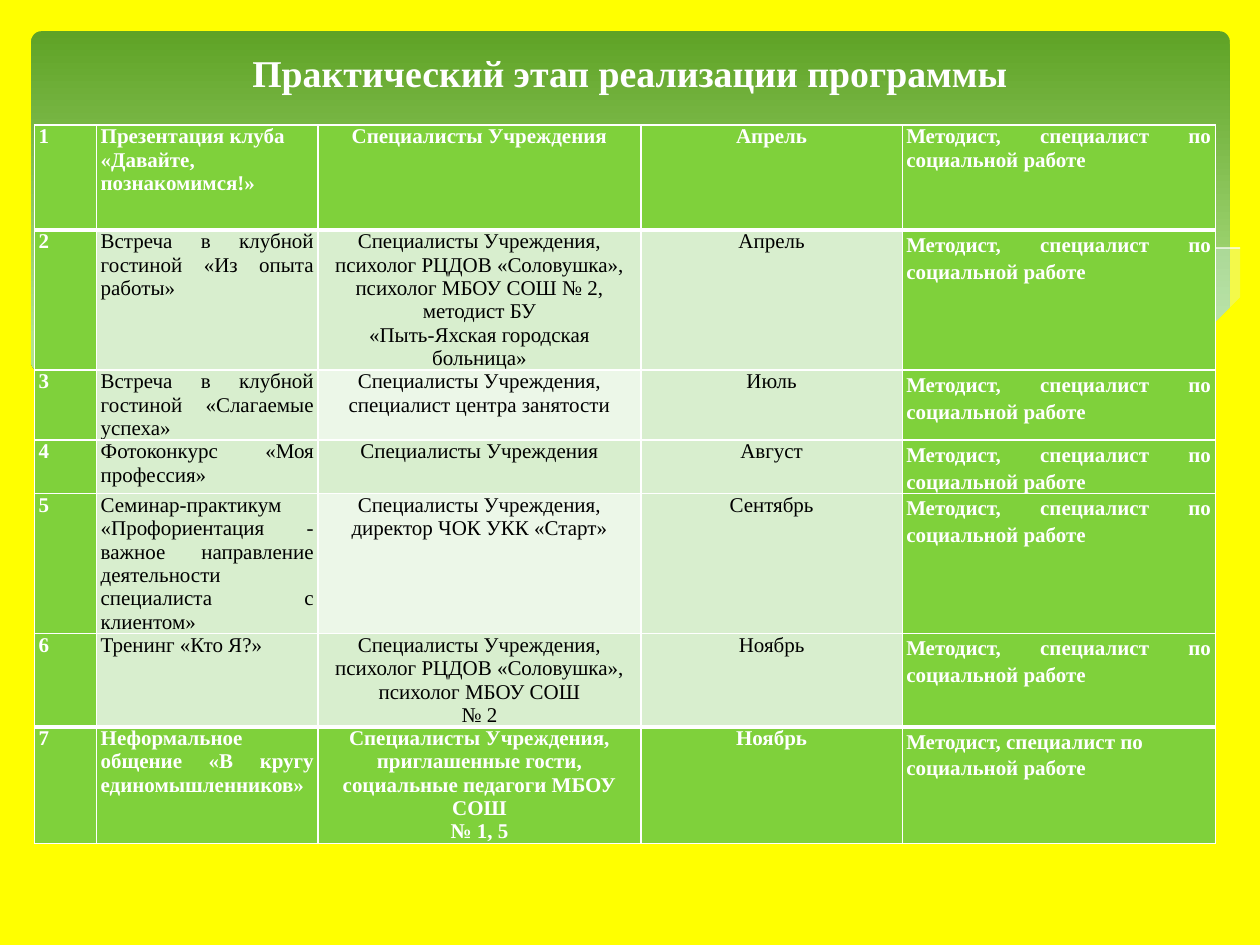
from lxml import etree
from pptx import Presentation
from pptx import util as u
from pptx.dml.color import RGBColor
from pptx.enum import shapes, text
from pptx.oxml import ns

YELLOW = RGBColor(0xFF, 0xFF, 0x00)
WHITE = RGBColor(0xFF, 0xFF, 0xFF)
BLACK = RGBColor(0, 0, 0)
GREEN = RGBColor(0x7F, 0xD1, 0x3B)
DARK_GREEN = RGBColor(0x5F, 0xA3, 0x26)
LIGHT_GREEN = RGBColor(0xB2, 0xE3, 0x89)
PALE = RGBColor(0xD8, 0xEE, 0xCE)
PALEST = RGBColor(0xEC, 0xF7, 0xE8)
ICE = RGBColor(0xD6, 0xEC, 0xFF)
FONT = "Times New Roman"

HEADING = "Практический этап реализации программы"
RESPONSIBLE = "Методист, специалист по социальной работе"
EVENTS = [
    (["Презентация клуба", "«Давайте, познакомимся!»"],
     ["Специалисты Учреждения"], "Апрель"),
    (["Встреча в клубной гостиной «Из опыта работы»"],
     ["Специалисты Учреждения, психолог РЦДОВ «Соловушка», психолог МБОУ СОШ № 2,",
      "методист БУ", "«Пыть-Яхская городская больница»"], "Апрель"),
    (["Встреча в клубной гостиной «Слагаемые успеха»"],
     ["Специалисты Учреждения, специалист центра занятости"], "Июль"),
    (["Фотоконкурс «Моя профессия»"], ["Специалисты Учреждения"], "Август"),
    (["Семинар-практикум «Профориентация - важное направление деятельности "
      "специалиста с клиентом»"],
     ["Специалисты Учреждения,", "директор ЧОК УКК «Старт»"], "Сентябрь"),
    (["Тренинг «Кто Я?»"],
     ["Специалисты Учреждения, психолог РЦДОВ «Соловушка», психолог МБОУ СОШ",
      "№ 2"], "Ноябрь"),
    (["Неформальное общение «В кругу единомышленников»"],
     ["Специалисты Учреждения,", "приглашенные гости, социальные педагоги МБОУ СОШ",
      "№ 1, 5"], "Ноябрь"),
]
COLUMN_WIDTHS = [1.25, 4.46, 6.51, 5.27, 6.31]
ROW_HEIGHTS = [2.12, 2.8, 1.4, 1.07, 2.8, 1.86, 2.35]

WAVES = [
    ([(24.77, 5.08), (23.39, 5.33), (21.87, 5.66), (19.13, 6.3), (16.79, 6.73),
      (18.59, 6.96), (20.4, 7.06), (22.15, 6.96), (23.58, 6.68), (24.77, 6.27)], ICE, 29),
    ([(22.68, 6.93), (20.5, 6.6), (17.93, 6.1), (14.45, 5.28), (12.42, 4.9),
      (10.13, 4.72), (8.33, 4.75), (7.26, 4.85), (9.2, 5.16), (11.4, 5.64),
      (14.38, 6.3), (17.27, 6.81), (19.94, 7.06), (21.54, 7.04)], ICE, 40),
    ([(7.85, 4.95), (8.97, 4.8), (11, 4.75), (12.95, 4.88), (15.44, 5.18),
      (18.47, 5.74), (21.11, 6.38), (23.04, 6.91)], None, 100),
    ([(15.57, 6.53), (17.65, 5.97), (20.47, 5.33), (22.73, 4.93), (24.77, 4.7)], None, 100),
    ([(24.82, 6.25), (23.62, 6.65), (22.23, 6.93), (20.55, 7.04), (18.44, 6.91),
      (15.9, 6.55), (12.78, 5.92), (9.27, 5.13), (6.35, 4.72), (4.09, 4.67),
      (2.41, 4.85), (1.17, 5.16), (0.58, 5.41), (0.58, 8.36), (24.82, 8.36)], YELLOW, 100),
]


def apply(target, values):
    for key, value in values.items():
        setattr(target, key, value)


def style_font(font, color, bold, size=12):
    apply(font, {"name": FONT, "size": u.Pt(size), "bold": bold})
    font.color.rgb = color


def draw_wave(slide, points, color, opacity):
    scale = u.Cm(1)
    builder = slide.shapes.build_freeform(*points[0], scale=scale)
    builder.add_line_segments(points[1:], close=color is not None)
    wave = builder.convert_to_shape()
    wave.shadow.inherit = False
    if color is None:
        wave.fill.background()
        wave.line.color.rgb = WHITE
        wave.line.width = u.Pt(0)
        return
    wave.fill.solid()
    wave.fill.fore_color.rgb = color
    wave.line.fill.background()
    if opacity < 100:
        tint = wave.fill._xPr.find(".//" + ns.qn("a:srgbClr"))
        etree.SubElement(tint, ns.qn("a:alpha"), val=str(opacity * 1000))


def draw_borders(cell, widths):
    props = cell._tc.get_or_add_tcPr()
    for index, (side, width) in enumerate(widths.items()):
        border = etree.Element(ns.qn("a:ln" + side), w=str(u.Pt(width)))
        paint = etree.SubElement(border, ns.qn("a:solidFill"))
        etree.SubElement(paint, ns.qn("a:srgbClr"), val=str(WHITE))
        props.insert(index, border)


def fill_cell(cell, lines, background, bold, align, spacing):
    apply(cell, {"margin_left": u.Cm(0.08), "margin_right": u.Cm(0.08),
                 "margin_top": 0, "margin_bottom": 0})
    cell.fill.solid()
    cell.fill.fore_color.rgb = background
    frame = cell.text_frame
    for index, line in enumerate(lines):
        paragraph = frame.paragraphs[0] if index == 0 else frame.add_paragraph()
        apply(paragraph, {"alignment": align, "line_spacing": spacing})
        run = paragraph.add_run()
        run.text = line
        style_font(run.font, WHITE if bold else BLACK, bold)


def draw_schedule(slide):
    last = len(EVENTS) - 1
    schedule = slide.shapes.add_table(
        len(EVENTS), len(COLUMN_WIDTHS), u.Cm(0.7), u.Cm(2.52),
        u.Cm(sum(COLUMN_WIDTHS)), u.Cm(sum(ROW_HEIGHTS))).table
    for column, width in zip(schedule.columns, COLUMN_WIDTHS):
        column.width = u.Cm(width)
    for row, height in zip(schedule.rows, ROW_HEIGHTS):
        row.height = u.Cm(height)
    justify, center = text.PP_ALIGN.JUSTIFY, text.PP_ALIGN.CENTER
    for r, (event, people, month) in enumerate(EVENTS):
        strong_row = r in (0, last)
        borders = {"L": 1, "R": 1, "T": 3 if r in (1, last) else 1,
                   "B": 3 if r in (0, last - 1) else 1}
        contents = [[str(r + 1)], event, people, [month], [RESPONSIBLE]]
        for c, lines in enumerate(contents):
            strong = strong_row or c in (0, 4)
            light = PALEST if c == 2 and r in (2, 4) else PALE
            align = center if c in (2, 3) else justify
            if (r, c) == (last, 4):
                align = text.PP_ALIGN.LEFT
            cell = schedule.cell(r, c)
            fill_cell(cell, lines, GREEN if strong else light, strong, align,
                      1.15 if c == 4 and r else 1.0)
            draw_borders(cell, borders)


def main():
    deck = Presentation()
    apply(deck, {"slide_width": u.Cm(25.4), "slide_height": u.Cm(19.05)})
    slide = deck.slides.add_slide(deck.slide_layouts[5])
    slide.background.fill.solid()
    slide.background.fill.fore_color.rgb = YELLOW

    band = slide.shapes.add_shape(shapes.MSO_SHAPE.ROUNDED_RECTANGLE,
                                  u.Cm(0.63), u.Cm(0.63), u.Cm(24.16), u.Cm(6.86))
    band.adjustments[0] = 0.03
    band.shadow.inherit = False
    band.line.fill.background()
    band.fill.gradient()
    band.fill.gradient_angle = 270
    for stop, color, position in zip(band.fill.gradient_stops,
                                     (DARK_GREEN, LIGHT_GREEN), (0, 0.9)):
        stop.color.rgb = color
        stop.position = position
    for wave in WAVES:
        draw_wave(slide, *wave)

    heading = slide.shapes.title
    apply(heading, {"left": u.Cm(1.27), "top": u.Cm(0.95),
                    "width": u.Cm(22.86), "height": u.Cm(1)})
    heading.text = HEADING
    apply(heading.text_frame, {"vertical_anchor": text.MSO_ANCHOR.MIDDLE,
                               "word_wrap": True, "auto_size": text.MSO_AUTO_SIZE.NONE})
    paragraph = heading.text_frame.paragraphs[0]
    paragraph.alignment = text.PP_ALIGN.CENTER
    style_font(paragraph.runs[0].font, WHITE, True, 21.6)
    slide.shapes._spTree.append(heading._element)

    draw_schedule(slide)
    deck.save("out.pptx")


if __name__ == "__main__":
    main()
